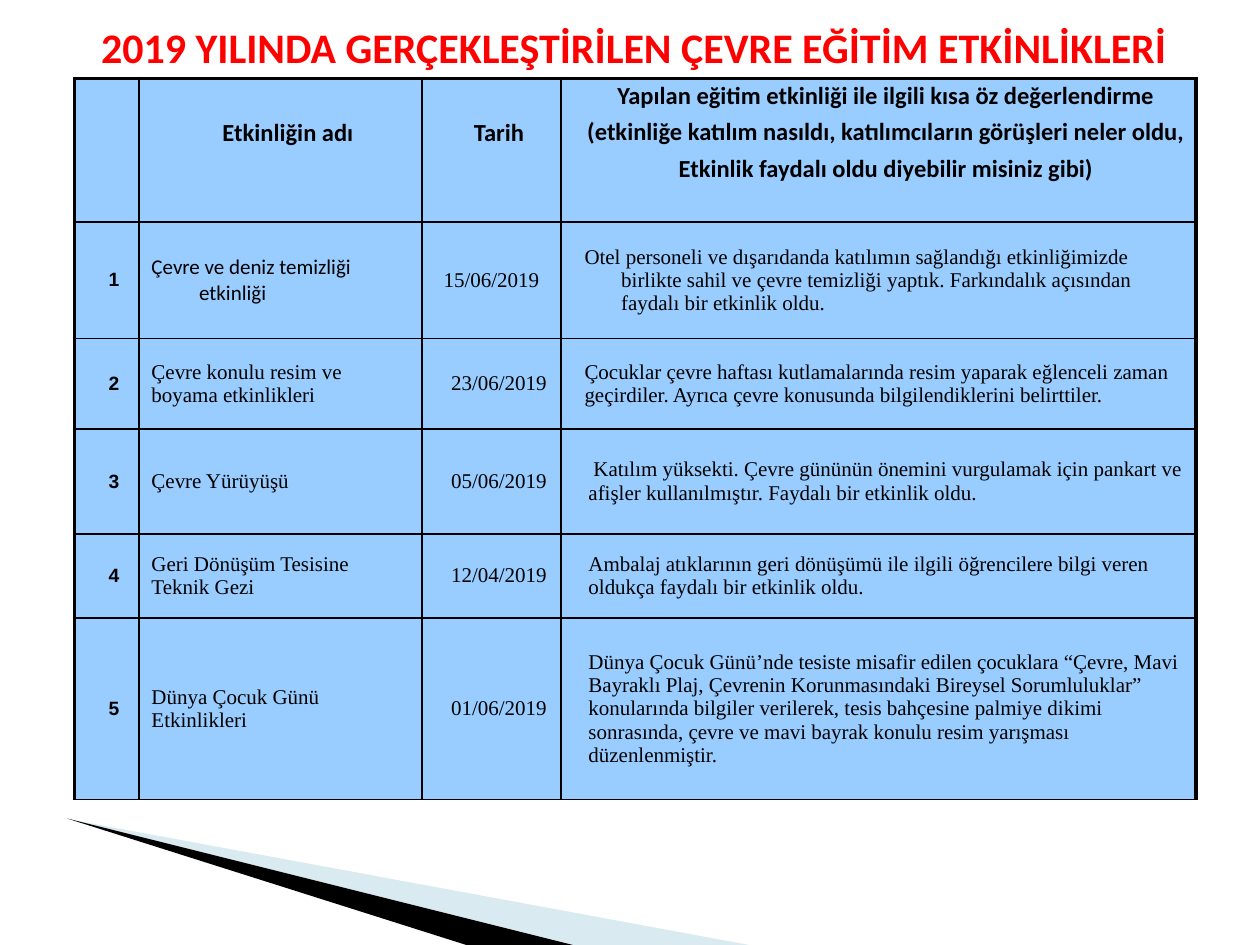
from dataclasses import dataclass

from lxml import etree
from pptx import Presentation
from pptx import util as u
from pptx.dml.color import RGBColor
from pptx.enum import text
from pptx.oxml.ns import qn

RED = RGBColor(0xFF, 0x00, 0x00)
BLACK = RGBColor(0x00, 0x00, 0x00)
SKY = RGBColor(0x99, 0xCC, 0xFF)
TEAL = RGBColor(0xA0, 0xCB, 0xDC)

SERIF = "Times New Roman"
COLS = (1.3, 5.71, 2.8, 12.8)
ROWS = (2.9, 2.34, 1.83, 2.11, 1.7, 3.66)


@dataclass
class Style:
    """Look of a cell's text; lengths in cm, sizes in points."""
    font: str = SERIF
    size: float = 12
    bold: bool = False
    mid: bool = False
    left: float = 0
    hang: float = 0
    gap: float = 0


@dataclass
class Event:
    name: str
    date: str
    note: str
    look: Style
    label: Style
    day: Style


HEAD = Style("Calibri", 14, True, True, left=0.3, gap=4)
NUM = Style("Arial", 11, True, True, left=0.3)
DAY = Style(mid=True, left=0.3)
NOTE = Style(left=0.3)
PLAIN = Style()

EVENTS = (
    Event("Çevre ve deniz temizliği etkinliği", "15/06/2019",
          "Otel personeli ve dışarıdanda katılımın sağlandığı etkinliğimizde "
          "birlikte sahil ve çevre temizliği yaptık. Farkındalık açısından "
          "faydalı bir etkinlik oldu.",
          Style(left=0.96, hang=-0.74),
          Style("Calibri", left=0.96, hang=-0.96), Style(mid=True)),
    Event("Çevre konulu resim ve\nboyama etkinlikleri", "23/06/2019",
          "Çocuklar çevre haftası kutlamalarında resim yaparak eğlenceli zaman\n"
          "geçirdiler. Ayrıca çevre konusunda bilgilendiklerini belirttiler.",
          Style(left=0.22), PLAIN, DAY),
    Event("Çevre Yürüyüşü", "05/06/2019",
          "Katılım yüksekti. Çevre gününün önemini vurgulamak için pankart ve "
          "afişler kullanılmıştır. Faydalı bir etkinlik oldu.",
          Style(left=0.3, hang=0.1), PLAIN, DAY),
    Event("Geri Dönüşüm Tesisine\nTeknik Gezi", "12/04/2019",
          "Ambalaj atıklarının geri dönüşümü ile ilgili öğrencilere bilgi veren "
          "oldukça faydalı bir etkinlik oldu.",
          NOTE, PLAIN, DAY),
    Event("Dünya Çocuk Günü\nEtkinlikleri", "01/06/2019",
          "Dünya Çocuk Günü’nde tesiste misafir edilen çocuklara “Çevre, Mavi "
          "Bayraklı Plaj, Çevrenin Korunmasındaki Bireysel Sorumluluklar” "
          "konularında bilgiler verilerek, tesis bahçesine palmiye dikimi "
          "sonrasında, çevre ve mavi bayrak konulu resim yarışması düzenlenmiştir.",
          NOTE, PLAIN, DAY),
)


def wedge(slide, points: list, fill: RGBColor, alpha: int = 100) -> None:
    pts = [(u.Cm(x), u.Cm(y)) for x, y in points]
    build = slide.shapes.build_freeform(*pts[0])
    build.add_line_segments(pts[1:])
    shape = build.convert_to_shape()
    shape.shadow.inherit = False
    shape.fill.solid()
    shape.fill.fore_color.rgb = fill
    shape.line.fill.background()
    if alpha < 100:
        tint = shape.fill._xPr.find(qn("a:solidFill"))[0]
        etree.SubElement(tint, qn("a:alpha"), val=str(alpha * 1000))


def border(cell, widths: dict) -> None:
    props = cell._tc.get_or_add_tcPr()
    for place, (side, width) in enumerate(widths.items()):
        line = etree.Element(qn(f"a:ln{side}"), w=str(u.Pt(width)))
        fill = etree.SubElement(line, qn("a:solidFill"))
        etree.SubElement(fill, qn("a:srgbClr"), val=str(BLACK))
        props.insert(place, line)


def write(cell, words: str, style: Style) -> None:
    cell.text_frame.text = words
    for place, para in enumerate(cell.text_frame.paragraphs):
        props = para._p.get_or_add_pPr()
        props.set("marL", str(u.Cm(style.left)))
        props.set("indent", str(u.Cm(style.hang)))
        para.alignment = text.PP_ALIGN.CENTER if style.mid else text.PP_ALIGN.LEFT
        if place and style.gap:
            para.space_before = u.Pt(style.gap)
        para.font.name = style.font
        para.font.size = u.Pt(style.size)
        para.font.bold = style.bold
        para.font.color.rgb = BLACK


def draw_table(slide) -> None:
    frame = slide.shapes.add_table(len(ROWS), len(COLS), u.Cm(1.5), u.Cm(1.58),
                                   u.Cm(sum(COLS)), u.Cm(sum(ROWS)))
    table = frame.table
    table.first_row = table.horz_banding = False
    for col, width in zip(table.columns, COLS):
        col.width = u.Cm(width)
    for row, height in zip(table.rows, ROWS):
        row.height = u.Cm(height)

    # Fill and borders: heavy on the left, top and right edges
    last = len(COLS) - 1
    for r in range(len(ROWS)):
        for c in range(len(COLS)):
            cell = table.cell(r, c)
            cell.fill.solid()
            cell.fill.fore_color.rgb = SKY
            cell.vertical_anchor = text.MSO_ANCHOR.MIDDLE
            border(cell, {"L": 1 if c else 2.25, "R": 2.25 if c == last else 1,
                          "T": 1 if r else 2.25, "B": 1})

    # Header row: short labels sit level with the second line of the long one
    heads = (("Etkinliğin adı", 0.8), ("Tarih", 0.8),
             ("Yapılan eğitim etkinliği ile ilgili kısa öz değerlendirme\n"
              "(etkinliğe katılım nasıldı, katılımcıların görüşleri neler oldu,\n"
              "Etkinlik faydalı oldu diyebilir misiniz gibi)", 0.05))
    for c, (words, top) in enumerate(heads, 1):
        cell = table.cell(0, c)
        cell.vertical_anchor = text.MSO_ANCHOR.TOP
        cell.margin_left = cell.margin_right = cell.margin_bottom = u.Cm(0.05)
        cell.margin_top = u.Cm(top)
        write(cell, words, HEAD)

    # One row per event
    for r, event in enumerate(EVENTS, 1):
        write(table.cell(r, 0), str(r), NUM)
        write(table.cell(r, 1), event.name, event.label)
        write(table.cell(r, 2), event.date, event.day)
        write(table.cell(r, 3), event.note, event.look)


def draw_title(slide) -> None:
    title = slide.shapes.title
    title.left, title.top = u.Cm(1.68), u.Cm(0.3)
    title.width, title.height = u.Cm(22.2), u.Cm(1.28)
    frame = title.text_frame
    frame.text = "2019 YILINDA GERÇEKLEŞTİRİLEN ÇEVRE EĞİTİM ETKİNLİKLERİ"
    frame.word_wrap = False
    frame.vertical_anchor = text.MSO_ANCHOR.TOP
    para = frame.paragraphs[0]
    para.alignment = text.PP_ALIGN.CENTER
    para.font.name = "Calibri"
    para.font.size = u.Pt(24)
    para.font.bold = True
    para.font.color.rgb = RED


def main() -> None:
    deck = Presentation()
    deck.slide_width, deck.slide_height = u.Cm(25.4), u.Cm(19.05)
    slide = deck.slides.add_slide(deck.slide_layouts[5])

    # Corner wedges
    wedge(slide, [(1.4, 16.52), (15.1, 19.05), (11.58, 19.05)], TEAL, 40)
    wedge(slide, [(1.35, 16.5), (11.55, 19.05), (9.4, 19.05)], BLACK)

    draw_title(slide)
    draw_table(slide)
    deck.save("out.pptx")


if __name__ == "__main__":
    main()
